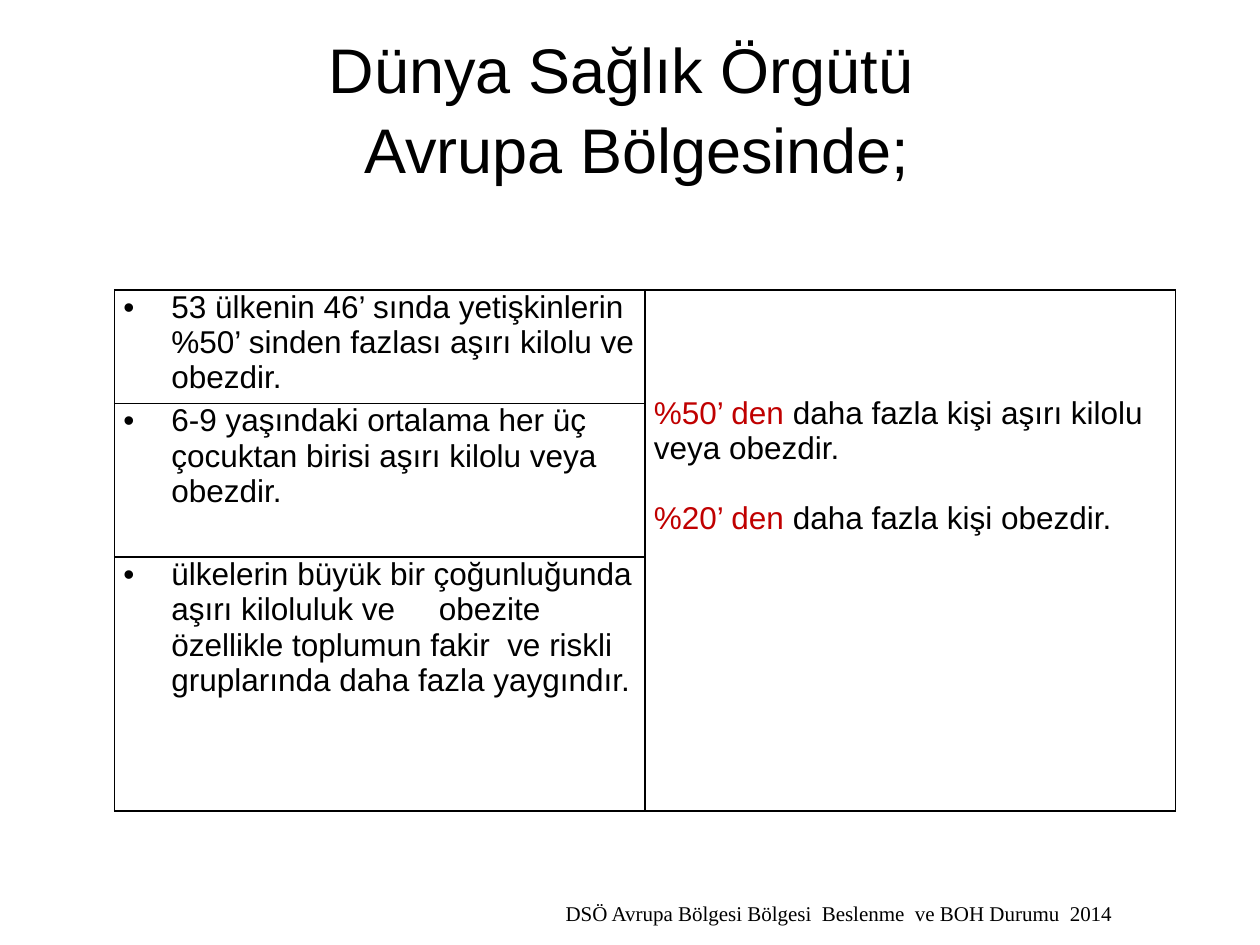
from dataclasses import dataclass

from lxml import etree
from pptx import Presentation
from pptx import util as u
from pptx.dml.color import RGBColor
from pptx.enum import text
from pptx.oxml import ns

COLORS = {"ink": "000000", "accent": "C00000", "paper": "FFFFFF"}
BODY_FONT = "Arial"
BODY_SIZE = 18
BULLET_INDENT = 0.38


@dataclass
class Label:
    words: str
    left: float
    top: float
    width: float
    height: float
    font: str
    size: float


@dataclass
class Fact:
    words: str
    height: float


@dataclass
class Share:
    amount: str
    words: str


TITLE = Label("Dünya Sağlık Örgütü \v Avrupa Bölgesinde;\v", 0.5, 0.3, 9, 1.64, BODY_FONT, 36)
SOURCE = Label("DSÖ Avrupa Bölgesi Bölgesi  Beslenme  ve BOH Durumu  2014",
               4.39, 7.1, 4.74, 0.3, "Times New Roman", 12)
FACTS = [
    Fact("53 ülkenin 46’ sında yetişkinlerin %50’ sinden fazlası aşırı kilolu ve obezdir.", 0.87),
    Fact("6-9 yaşındaki ortalama her üç çocuktan birisi aşırı kilolu veya obezdir.", 1.22),
    Fact("ülkelerin büyük bir çoğunluğunda aşırı kiloluluk ve     obezite özellikle "
         "toplumun fakir  ve riskli gruplarında daha fazla yaygındır.", 1.95),
]
SHARES = [
    Share("%50’ den ", "daha fazla kişi aşırı kilolu veya obezdir."),
    Share("%20’ den ", "daha fazla kişi obezdir."),
]


def style(span, font: str, size: float, color: str = "ink") -> None:
    span.font.name = font
    span.font.size = u.Pt(size)
    span.font.color.rgb = RGBColor.from_string(COLORS[color])


def add_label(page, label: Label):
    box = page.shapes.add_textbox(u.Inches(label.left), u.Inches(label.top),
                                  u.Inches(label.width), u.Inches(label.height))
    box.text_frame.text = label.words
    para = box.text_frame.paragraphs[0]
    para.font.size = u.Pt(label.size)
    for span in para.runs:
        style(span, label.font, label.size)
    return box


def add_bullet(para) -> None:
    properties = para._p.get_or_add_pPr()
    indent = u.Inches(BULLET_INDENT)
    properties.set("marL", str(indent))
    properties.set("indent", str(-indent))
    etree.SubElement(properties, ns.qn("a:buFont")).set("typeface", BODY_FONT)
    etree.SubElement(properties, ns.qn("a:buChar")).set("char", "•")


def frame_cell(cell) -> None:
    """White cell with a thin black line on every side."""
    cell.fill.solid()
    cell.fill.fore_color.rgb = RGBColor.from_string(COLORS["paper"])
    cell.margin_left = cell.margin_right = u.Inches(0.07)
    cell.margin_top = cell.margin_bottom = 0
    properties = cell._tc.get_or_add_tcPr()
    for place, side in enumerate(("lnL", "lnR", "lnT", "lnB")):
        line = etree.Element(ns.qn(f"a:{side}"), w=str(u.Pt(1)))
        fill = etree.SubElement(line, ns.qn("a:solidFill"))
        etree.SubElement(fill, ns.qn("a:srgbClr")).set("val", COLORS["ink"])
        properties.insert(place, line)


def add_facts_table(page) -> None:
    height = sum(fact.height for fact in FACTS)
    table = page.shapes.add_table(len(FACTS), 2, u.Inches(0.91), u.Inches(2.3),
                                  u.Inches(8.42), u.Inches(height)).table
    table.first_row = table.horz_banding = False
    for row, fact in zip(table.rows, FACTS):
        row.height = u.Inches(fact.height)
    for cell in table.iter_cells():
        frame_cell(cell)
        cell.text_frame.paragraphs[0].font.size = u.Pt(BODY_SIZE)

    # Left column: one bulleted fact per row
    for index, fact in enumerate(FACTS):
        frame = table.cell(index, 0).text_frame
        frame.text = fact.words
        para = frame.paragraphs[0]
        add_bullet(para)
        style(para.runs[0], BODY_FONT, BODY_SIZE)

    # Right column: one merged cell with the shares
    merged = table.cell(0, 1)
    merged.merge(table.cell(len(FACTS) - 1, 1))
    merged.margin_top = u.Inches(0.84)
    frame = merged.text_frame
    for index, share in enumerate(SHARES):
        para = frame.add_paragraph() if index else frame.paragraphs[0]
        if index:
            para.space_before = u.Pt(20)
        for words, color in ((share.amount, "accent"), (share.words, "ink")):
            span = para.add_run()
            span.text = words
            style(span, BODY_FONT, BODY_SIZE, color)


def main() -> None:
    deck = Presentation()
    deck.slide_width, deck.slide_height = u.Inches(10), u.Inches(7.5)
    page = deck.slides.add_slide(deck.slide_layouts[6])

    # Title
    title = add_label(page, TITLE).text_frame
    title.word_wrap = True
    title.vertical_anchor = text.MSO_ANCHOR.MIDDLE
    title.margin_top, title.margin_bottom = u.Inches(0.05), 0
    title.paragraphs[0].alignment = text.PP_ALIGN.CENTER
    title.paragraphs[0].line_spacing = 1.05

    add_facts_table(page)

    # Source line
    source = add_label(page, SOURCE).text_frame
    source.word_wrap = False
    source.auto_size = text.MSO_AUTO_SIZE.SHAPE_TO_FIT_TEXT

    deck.save("out.pptx")


if __name__ == "__main__":
    main()
